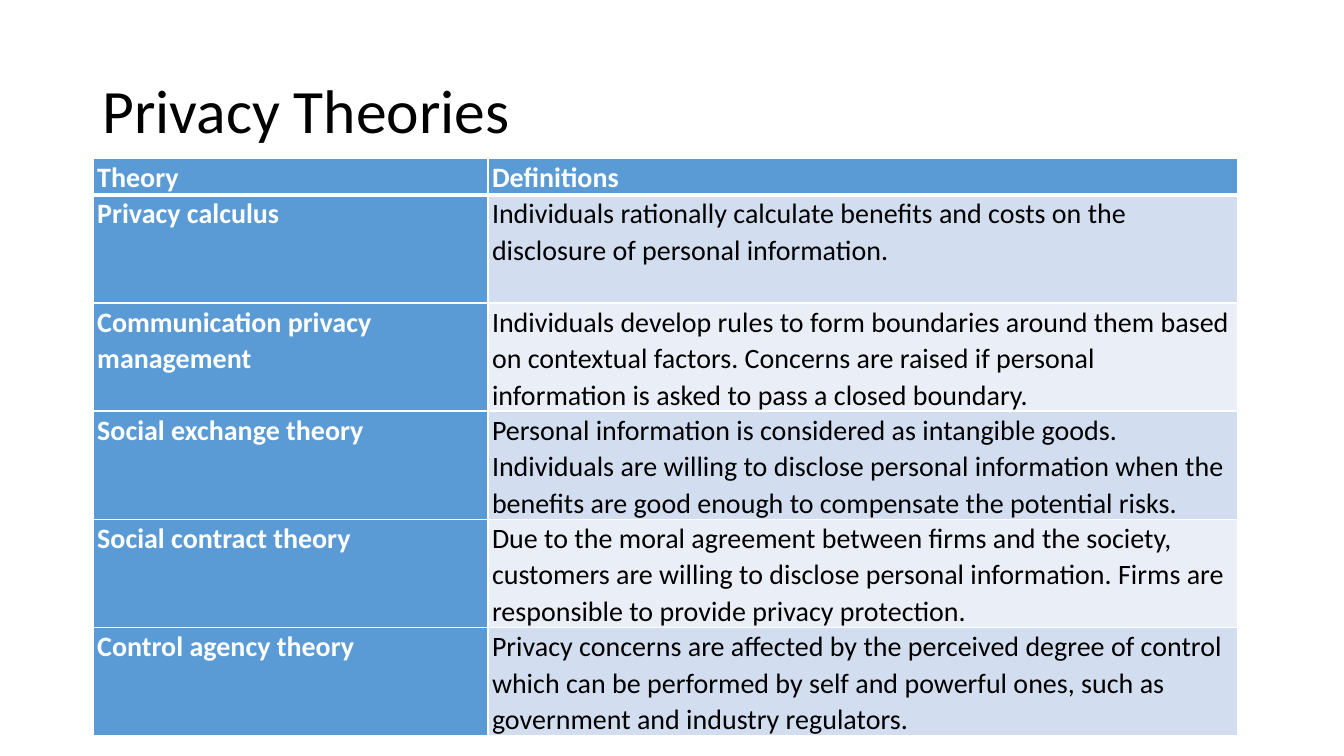
import pptx
import pptx.dml.color
import pptx.enum.text
import pptx.oxml
import pptx.oxml.ns
import pptx.util

Cm = pptx.util.Cm
Pt = pptx.util.Pt

COLOURS = {
    "white": "FFFFFF",
    "black": "000000",
    "header": "5B9BD5",
    "band_dark": "D2DEEF",
    "band_light": "EAEFF7",
}

THEORIES = [
    ("Theory", "Definitions"),
    ("Privacy calculus",
     "Individuals rationally calculate benefits and costs on the disclosure of personal information."),
    ("Communication privacy management",
     "Individuals develop rules to form boundaries around them based on contextual factors. "
     "Concerns are raised if personal information is asked to pass a closed boundary."),
    ("Social exchange theory",
     "Personal information is considered as intangible goods. Individuals are willing to disclose "
     "personal information when the benefits are good enough to compensate the potential risks."),
    ("Social contract theory",
     "Due to the moral agreement between firms and the society, customers are willing to disclose "
     "personal information. Firms are responsible to provide privacy protection."),
    ("Control agency theory",
     "Privacy concerns are affected by the perceived degree of control which can be performed by "
     "self and powerful ones, such as government and industry regulators."),
]

TITLE_FORMAT = {"name": "Calibri", "size": Pt(44), "bold": False}
HEADING_FORMAT = {"name": "Calibri", "size": Pt(20), "bold": True}
BODY_FORMAT = {"name": "Calibri", "size": Pt(20), "bold": False}
CELL_FORMAT = {
    "margin_left": Cm(0.1),
    "margin_right": Cm(0.1),
    "margin_top": 0,
    "margin_bottom": 0,
    "vertical_anchor": pptx.enum.text.MSO_ANCHOR.TOP,
}


def colour(name):
    return pptx.dml.color.RGBColor.from_string(COLOURS[name])


def apply_format(target, values):
    for name, value in values.items():
        setattr(target, name, value)


def write_text(frame, text, font_format, font_colour, spacing):
    para = frame.paragraphs[0]
    para.line_spacing = spacing
    span = para.add_run()
    span.text = text
    apply_format(span.font, font_format)
    span.font.color.rgb = colour(font_colour)


def add_border(cell, side, width):
    properties = cell._tc.get_or_add_tcPr()
    properties.append(pptx.oxml.parse_xml(
        f'<a:{side} {pptx.oxml.ns.nsdecls("a")} w="{Pt(width)}">'
        f'<a:solidFill><a:srgbClr val="{COLOURS["white"]}"/></a:solidFill></a:{side}>'
    ))


def add_title(page, left, top, width, height):
    box = page.shapes.add_textbox(left, top, width, height)
    frame = box.text_frame
    frame.word_wrap = True
    frame.vertical_anchor = pptx.enum.text.MSO_ANCHOR.MIDDLE
    write_text(frame, "Privacy Theories", TITLE_FORMAT, "black", 0.9)


def add_theory_table(page, left, top, width, height):
    header_height = Cm(0.93)
    name_width = Cm(9.95)
    body_height = (height - header_height) // (len(THEORIES) - 1)
    table = page.shapes.add_table(len(THEORIES), 2, left, top, width, height).table
    table.horz_banding = False
    table.columns[0].width = name_width
    table.columns[1].width = width - name_width
    for row, texts in enumerate(THEORIES):
        table.rows[row].height = body_height if row else header_height
        for column, text in enumerate(texts):
            cell = table.cell(row, column)
            is_heading = row == 0 or column == 0
            apply_format(cell, CELL_FORMAT)
            add_border(cell, "lnL", 1)
            add_border(cell, "lnR", 1)
            add_border(cell, "lnT", 3 if row == 1 else 1)
            add_border(cell, "lnB", 3 if row == 0 else 1)
            band = "band_dark" if row % 2 else "band_light"
            cell.fill.solid()
            cell.fill.fore_color.rgb = colour("header" if is_heading else band)
            write_text(
                cell.text_frame,
                text,
                HEADING_FORMAT if is_heading else BODY_FORMAT,
                "white" if is_heading else "black",
                1.07,
            )


def main():
    deck = pptx.Presentation()
    deck.slide_width = Cm(33.87)
    deck.slide_height = Cm(19.05)
    page = deck.slides.add_slide(deck.slide_layouts[6])
    add_title(page, Cm(2.33), Cm(1.01), Cm(29.21), Cm(3.68))
    add_theory_table(page, Cm(2.35), Cm(3.98), Cm(28.83), Cm(14.55))
    deck.save("out.pptx")


if __name__ == "__main__":
    main()
